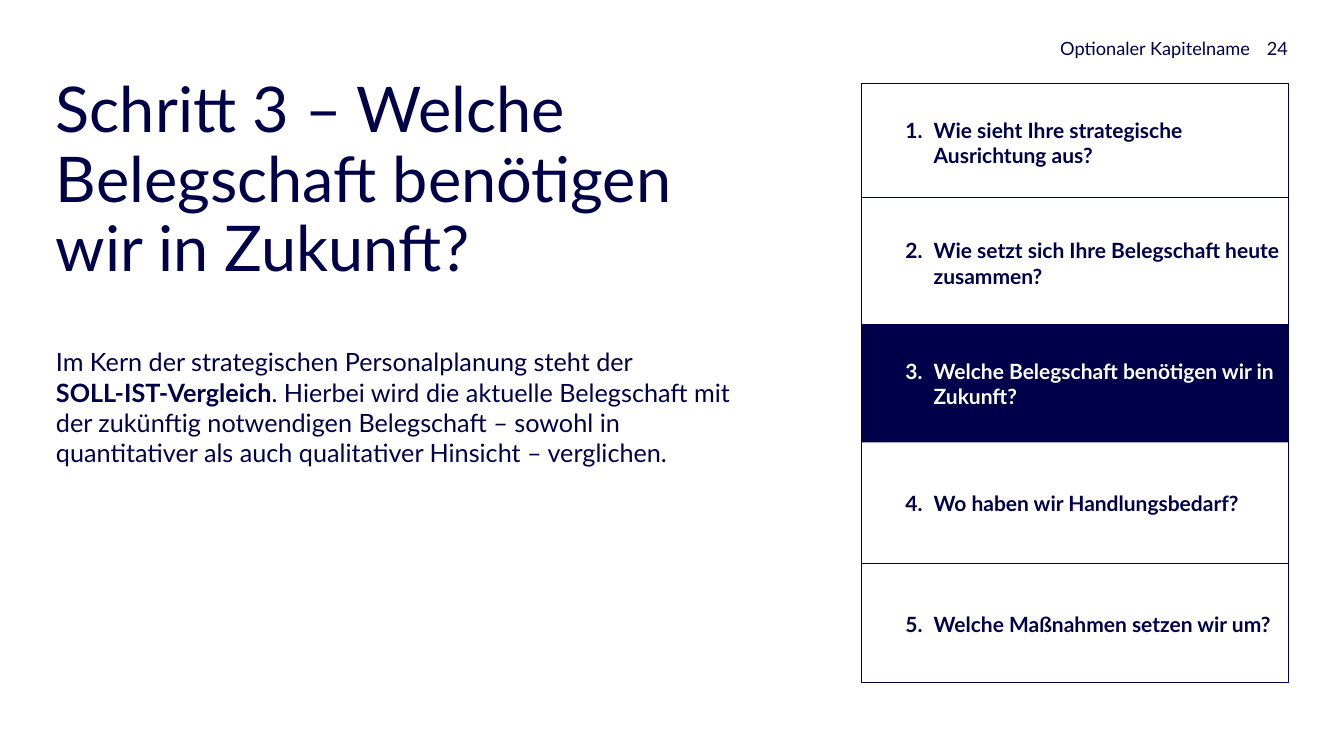
from dataclasses import dataclass

from lxml.etree import SubElement
from pptx import Presentation
from pptx.dml.color import RGBColor
from pptx.enum.shapes import MSO_CONNECTOR, MSO_SHAPE
from pptx.enum.text import MSO_ANCHOR, MSO_AUTO_SIZE, PP_ALIGN
from pptx.oxml.ns import qn
from pptx.util import Pt

TITLE = "Schritt 3 – Welche Belegschaft benötigen wir in Zukunft?"
INTRO = "Im Kern der strategischen Personalplanung steht der"
BODY = [
    ("SOLL-IST-Vergleich", True),
    (". Hierbei wird die aktuelle Belegschaft mit der zukünftig notwendigen "
     "Belegschaft – sowohl in quantitativer als auch qualitativer Hinsicht "
     "– verglichen.", False),
]
HEADER = [("Optionaler Kapitelname", 111, 2369), ("24", 2480, 75)]
STEPS = [
    "Wie sieht Ihre strategische Ausrichtung aus?",
    "Wie setzt sich Ihre Belegschaft heute zusammen?",
    "Welche Belegschaft benötigen wir in Zukunft?",
    "Wo haben wir Handlungsbedarf?",
    "Welche Maßnahmen setzen wir um?",
]
ACTIVE_STEP = 3
DIVIDERS = [392, 1118]


@dataclass(frozen=True)
class Theme:
    font: str = "Lato"
    navy: str = "00004A"
    white: str = "FFFFFF"
    title: int = 90
    body: int = 36
    step: int = 30
    header: int = 26
    frame: float = 0.75
    divider: float = 0.5


THEME = Theme()
EMU_PER_PX = 9144
SLIDE_W, SLIDE_H = 2666, 1500
LEFT, TEXT_W = 111, 1404
PANEL_X, PANEL_Y, PANEL_W, PANEL_H = 1709, 166, 847, 1188
STEP_H = 235
STEP_PITCH = (PANEL_H + 4.5) / len(STEPS)
STEP_INSETS = (87, 16, 16, 16)
NUMBER_INDENT = 56


def px(*values):
    return [round(v * EMU_PER_PX) for v in values]


def place(sp, x, y, w, h):
    sp.left, sp.top, sp.width, sp.height = px(x, y, w, h)


def prepare(sp, anchor=MSO_ANCHOR.TOP, insets=(0, 0, 0, 0), align=PP_ALIGN.LEFT):
    tf = sp.text_frame
    tf.word_wrap = True
    tf.auto_size = MSO_AUTO_SIZE.NONE
    tf.vertical_anchor = anchor
    tf.margin_left, tf.margin_top, tf.margin_right, tf.margin_bottom = px(*insets)
    p = tf.paragraphs[0]
    p.alignment = align
    p.space_before = Pt(0)
    return p


def add_run(p, text, size, color=THEME.navy, bold=False):
    r = p.add_run()
    r.text = text
    r.font.name = THEME.font
    r.font.size = Pt(size)
    r.font.bold = bold
    r.font.color.rgb = RGBColor.from_string(color)


def set_indent(p, left, first):
    pPr = p._p.get_or_add_pPr()
    pPr.set("marL", str(px(left)[0]))
    pPr.set("indent", str(px(first)[0]))
    return pPr


def set_number(p, start, color):
    pPr = set_indent(p, NUMBER_INDENT, -NUMBER_INDENT)
    SubElement(SubElement(pPr, qn("a:buClr")), qn("a:srgbClr"), val=color)
    SubElement(pPr, qn("a:buFont"), typeface=THEME.font)
    SubElement(pPr, qn("a:buAutoNum"), type="arabicPeriod", startAt=str(start))


def add_rect(s, x, y, w, h):
    sp = s.shapes.add_shape(MSO_SHAPE.RECTANGLE, *px(x, y, w, h))
    sp.shadow.inherit = False
    return sp


def add_title_and_body(s):
    title, body = s.placeholders[0], s.placeholders[1]
    place(title, LEFT, 153, TEXT_W, 299)
    p = prepare(title)
    p.line_spacing = 0.92
    add_run(p, TITLE, THEME.title)

    place(body, LEFT, 688, TEXT_W, 666)
    p = prepare(body)
    SubElement(set_indent(p, 0, 0), qn("a:buNone"))
    add_run(p, INTRO, THEME.body)
    p.add_line_break()
    for text, bold in BODY:
        add_run(p, text, THEME.body, bold=bold)


def add_header(s):
    for text, x, w in HEADER:
        sp = s.shapes.add_textbox(*px(x, 0, w, 118))
        p = prepare(sp, MSO_ANCHOR.BOTTOM, align=PP_ALIGN.RIGHT)
        add_run(p, text, THEME.header)


def add_steps(s):
    navy = RGBColor.from_string(THEME.navy)
    frame = add_rect(s, PANEL_X, PANEL_Y, PANEL_W, PANEL_H)
    frame.fill.background()
    frame.line.color.rgb = navy
    frame.line.width = Pt(THEME.frame)

    for i, text in enumerate(STEPS):
        number = i + 1
        box = (PANEL_X, PANEL_Y + i * STEP_PITCH, PANEL_W, STEP_H)
        color = THEME.navy
        if number == ACTIVE_STEP:
            color = THEME.white
            sp = add_rect(s, *box)
            sp.fill.solid()
            sp.fill.fore_color.rgb = navy
            sp.line.fill.background()
        else:
            sp = s.shapes.add_textbox(*px(*box))
        p = prepare(sp, MSO_ANCHOR.MIDDLE, STEP_INSETS)
        set_number(p, number, color)
        add_run(p, text, THEME.step, color, True)

    for y in DIVIDERS:
        line = s.shapes.add_connector(
            MSO_CONNECTOR.STRAIGHT, *px(PANEL_X, y, PANEL_X + PANEL_W, y))
        line.line.color.rgb = navy
        line.line.width = Pt(THEME.divider)
        SubElement(line._element.spPr, qn("a:effectLst"))


def main():
    prs = Presentation()
    prs.slide_width, prs.slide_height = px(SLIDE_W, SLIDE_H)
    s = prs.slides.add_slide(prs.slide_layouts[1])
    add_title_and_body(s)
    add_header(s)
    add_steps(s)
    prs.save("out.pptx")


if __name__ == "__main__":
    main()
